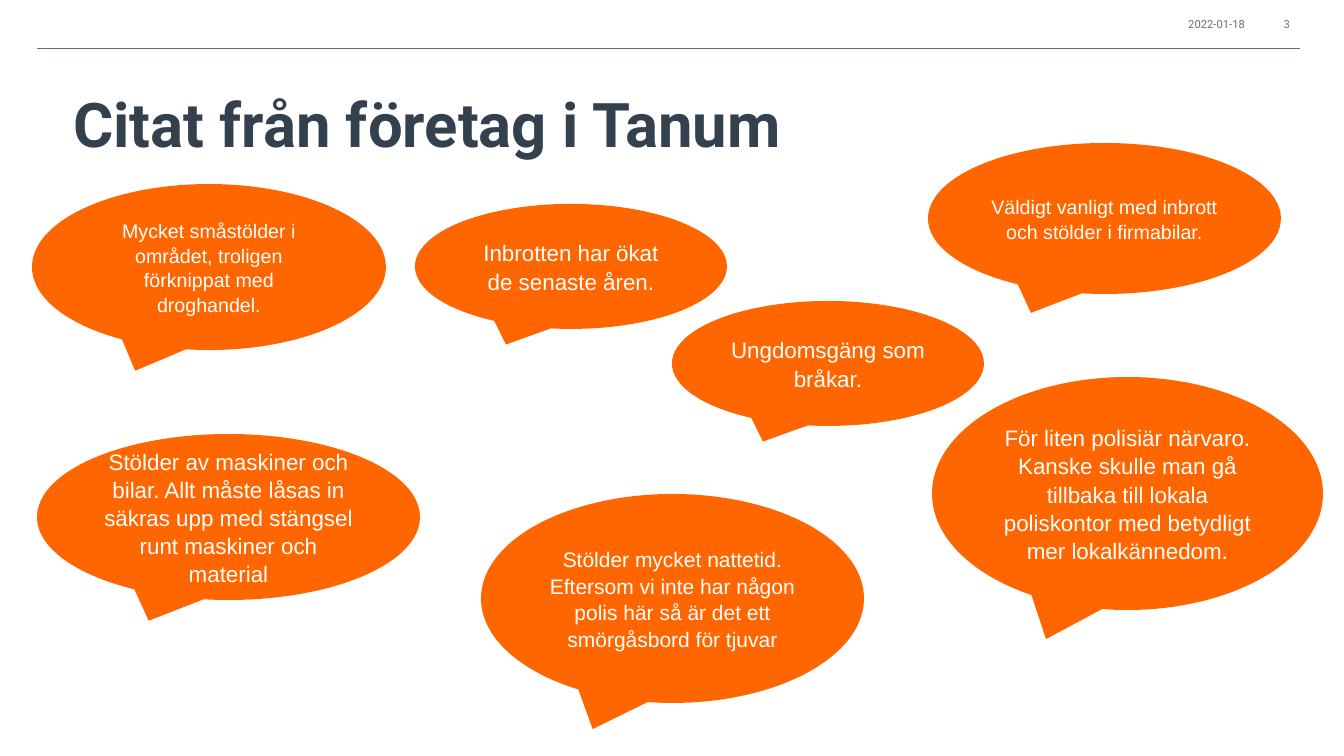
import pptx
import pptx.util
import pptx.dml.color
import pptx.enum.shapes
import pptx.enum.text
import pptx.oxml.ns
import lxml.etree

PX = 914400 / 100.8  # one px in EMU
ORANGE = pptx.dml.color.RGBColor(0xFF, 0x66, 0x00)
WHITE = pptx.dml.color.RGBColor(0xFF, 0xFF, 0xFF)
SLATE = pptx.dml.color.RGBColor(0x33, 0x41, 0x4E)
GREY = pptx.dml.color.RGBColor(0x61, 0x71, 0x7F)
ALIGN = pptx.enum.text.PP_ALIGN

# Each quote: box (left, top, width, height), text size, text
QUOTES = [
    ((32, 184, 354, 166), 14,
     "Mycket småstölder i området, troligen förknippat med droghandel."),
    ((481, 494, 383, 209), 15,
     "Stölder mycket nattetid. Eftersom vi inte har någon polis här "
     "så är det ett smörgåsbord för tjuvar"),
    ((928, 143, 353, 151), 14,
     "Väldigt vanligt med inbrott och stölder i firmabilar."),
    ((37, 434, 383, 166), 16,
     "Stölder av maskiner och bilar. Allt måste låsas in säkras upp "
     "med stängsel runt maskiner och material"),
    ((932, 377, 391, 233), 16,
     "För liten polisiär närvaro. Kanske skulle man gå tillbaka till "
     "lokala poliskontor med betydligt mer lokalkännedom."),
    ((415, 204, 312, 125), 16, "Inbrotten har ökat de senaste åren."),
    ((672, 301, 312, 125), 16, "Ungdomsgäng som bråkar."),
]


def px(*lengths):
    return [pptx.util.Emu(round(length * PX)) for length in lengths]


def write(shape, text, size, color, font="Roboto", bold=False,
          align=ALIGN.LEFT, spacing=1.0):
    frame = shape.text_frame
    frame.word_wrap = True
    frame.auto_size = pptx.enum.text.MSO_AUTO_SIZE.NONE
    frame.vertical_anchor = pptx.enum.text.MSO_ANCHOR.MIDDLE
    para = frame.paragraphs[0]
    para.alignment = align
    para.line_spacing = spacing
    span = para.add_run()
    span.text = text
    span.font.name = font
    span.font.size = pptx.util.Pt(size)
    span.font.bold = bold
    span.font.color.rgb = color


def add_header(page, box):
    """Date and page number above a thin rule along the foot of the box."""
    left, top, width, height = box
    right, bottom = left + width, top + height
    rule = page.shapes.add_connector(
        pptx.enum.shapes.MSO_CONNECTOR.STRAIGHT,
        *px(left, bottom, right, bottom))
    rule.line.color.rgb = GREY
    rule.line.width = pptx.util.Pt(0.5)
    lxml.etree.SubElement(rule.element.spPr, pptx.oxml.ns.qn("a:effectLst"))
    for text, offset, label_width in (("2022-01-18", 139, 94), ("3", 37, 37)):
        label = page.shapes.add_textbox(
            *px(right - offset, top, label_width, 22))
        write(label, text, 8, GREY, align=ALIGN.RIGHT)


def add_title(page, box):
    title = page.shapes.title
    title.left, title.top, title.width, title.height = px(*box)
    title.text_frame.margin_left = px(25)[0]
    write(title, "Citat från företag i Tanum", 44, SLATE, bold=True,
          spacing=0.9)


def add_quote(page, box, size, text):
    bubble = page.shapes.add_shape(
        pptx.enum.shapes.MSO_SHAPE.OVAL_CALLOUT, *px(*box))
    bubble.shadow.inherit = False
    bubble.fill.solid()
    bubble.fill.fore_color.rgb = ORANGE
    bubble.line.fill.background()
    write(bubble, text, size, WHITE, font="Arial", align=ALIGN.CENTER,
          spacing=1.05)


def main():
    deck = pptx.Presentation()
    deck.slide_width, deck.slide_height = px(1344, 756)
    page = deck.slides.add_slide(deck.slide_layouts.get_by_name("Title Only"))
    add_header(page, (37, 13, 1263, 35))
    add_title(page, (48, 72, 1159, 112))
    for box, size, text in QUOTES:
        add_quote(page, box, size, text)
    deck.save("out.pptx")


if __name__ == "__main__":
    main()
